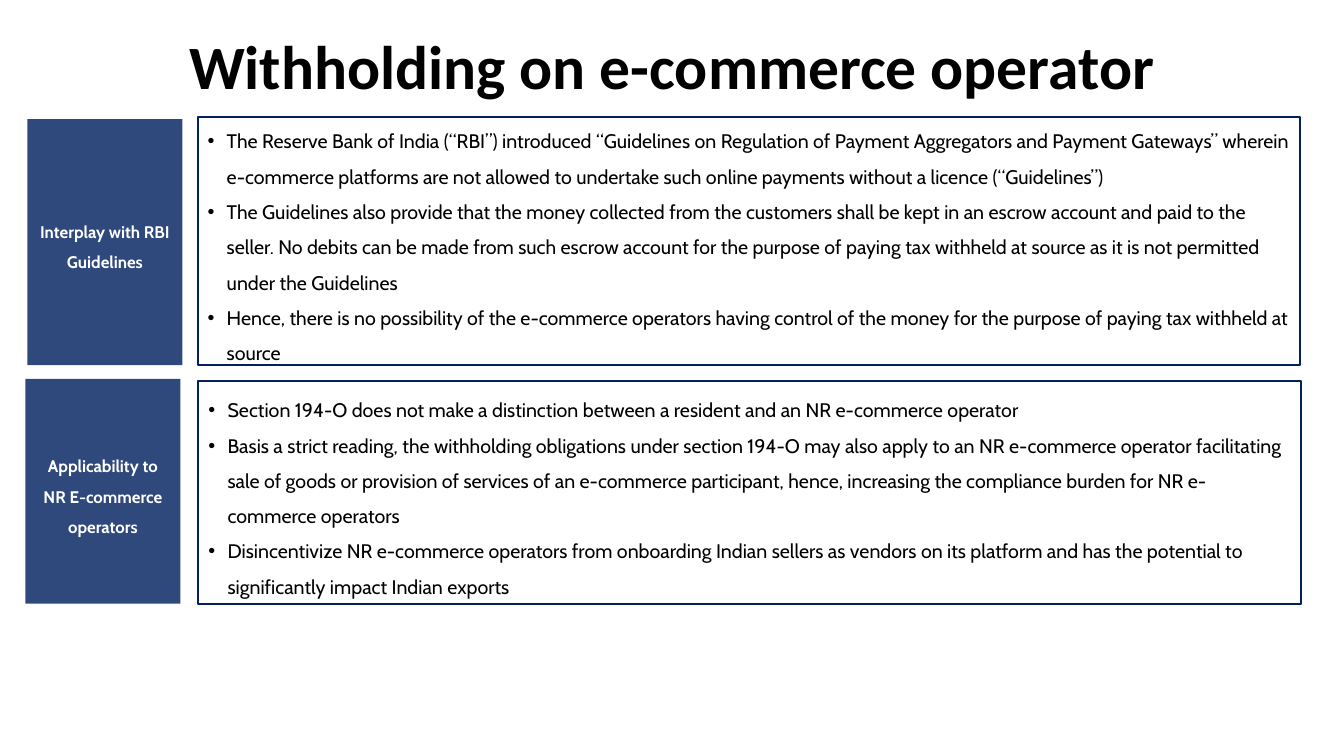
from lxml import etree
from pptx import Presentation
from pptx import util as u
from pptx.dml.color import RGBColor
from pptx.enum import shapes, text
from pptx.oxml.ns import qn

NAVY, BLACK, WHITE = "002060", "000000", "FFFFFF"
INDENT = u.Cm(0.48)

SECTIONS = [
    {
        "label": "Interplay with RBI Guidelines",
        "label_box": (0.69, 3.0, 3.91, 6.2),
        "list_box": (4.98, 2.95, 27.79, 6.25),
        "points": [
            "The Reserve Bank of India (“RBI”) introduced “Guidelines on Regulation of Payment "
            "Aggregators and Payment Gateways” wherein e-commerce platforms are not allowed to "
            "undertake such online payments without a licence (“Guidelines”)",
            "The Guidelines also provide that the money collected from the customers shall be kept "
            "in an escrow account and paid to the seller. No debits can be made from such escrow "
            "account for the purpose of paying tax withheld at source as it is not permitted under "
            "the Guidelines",
            "Hence, there is no possibility of the e-commerce operators having control of the money "
            "for the purpose of paying tax withheld at source",
        ],
    },
    {
        "label": "Applicability to NR E-commerce operators",
        "label_box": (0.64, 9.55, 3.91, 5.66),
        "list_box": (5.0, 9.6, 27.79, 5.61),
        "points": [
            "Section 194-O does not make a distinction between a resident and an NR e-commerce operator",
            "Basis a strict reading, the withholding obligations under section 194-O may also apply "
            "to an NR e-commerce operator facilitating sale of goods or provision of services of an "
            "e-commerce participant, hence, increasing the compliance burden for NR e-commerce operators",
            "Disincentivize NR e-commerce operators from onboarding Indian sellers as vendors on its "
            "platform and has the potential to significantly impact Indian exports",
        ],
    },
]


def color(value):
    """Return the colour for a hex string."""
    return RGBColor.from_string(value)


def place(shape, box):
    """Move a shape to a box of left, top, width and height in centimetres."""
    shape.left, shape.top, shape.width, shape.height = (u.Cm(length) for length in box)


def add_bullet(paragraph):
    """Give a paragraph a hanging round bullet."""
    properties = paragraph._p.get_or_add_pPr()
    properties.set("marL", str(INDENT))
    properties.set("indent", str(-INDENT))
    etree.SubElement(properties, qn("a:buFont"), typeface="Arial")
    etree.SubElement(properties, qn("a:buChar"), char="•")


def write(shape, paragraphs, *, size, font="Cabin", fill=BLACK, bold=False,
          align=text.PP_ALIGN.LEFT, spacing=1.5, bullets=False):
    """Fill a shape with formatted, vertically centred paragraphs."""
    frame = shape.text_frame
    frame.word_wrap = True
    frame.auto_size = text.MSO_AUTO_SIZE.NONE
    frame.vertical_anchor = text.MSO_ANCHOR.MIDDLE
    frame.text = "\n".join(paragraphs)
    for paragraph in frame.paragraphs:
        if bullets:
            add_bullet(paragraph)
        paragraph.alignment = align
        paragraph.line_spacing = spacing
        paragraph.space_before = paragraph.space_after = u.Pt(0)
        paragraph.font.size = u.Pt(size)
        for run in paragraph.runs:
            run.font.name = font
            run.font.size = u.Pt(size)
            run.font.bold = bold
            run.font.color.rgb = color(fill)


def add_title(slide, box):
    """Place the slide title in its box."""
    title = slide.shapes.title
    place(title, box)
    write(title, ["Withholding on e-commerce operator"], size=44, font="Calibri",
          bold=True, align=text.PP_ALIGN.CENTER, spacing=0.9)


def add_label(slide, box, label):
    """Add a translucent navy panel with a section label."""
    panel = slide.shapes.add_shape(shapes.MSO_SHAPE.RECTANGLE, *(u.Cm(length) for length in box))
    panel.shadow.inherit = False
    panel.fill.solid()
    panel.fill.fore_color.rgb = color(NAVY)
    rgb = panel.fill._xPr.find(qn("a:solidFill")).find(qn("a:srgbClr"))
    etree.SubElement(rgb, qn("a:alpha"), val="81000")
    panel.line.fill.background()
    write(panel, [label], size=12, fill=WHITE, bold=True, align=text.PP_ALIGN.CENTER)


def add_points(placeholder, box, points):
    """Place a framed bullet list in its box."""
    place(placeholder, box)
    placeholder.line.color.rgb = color(NAVY)
    placeholder.line.width = u.Pt(1.5)
    write(placeholder, points, size=14, bullets=True)


def main():
    """Build and save the presentation."""
    presentation = Presentation()
    presentation.slide_width, presentation.slide_height = u.Cm(33.87), u.Cm(19.05)
    slide = presentation.slides.add_slide(presentation.slide_layouts.get_by_name("Two Content"))
    add_title(slide, (2.34, 0.2, 29.21, 3.1))
    for index, section in enumerate(SECTIONS, start=1):
        add_points(slide.placeholders[index], section["list_box"], section["points"])
        add_label(slide, section["label_box"], section["label"])
    presentation.save("out.pptx")


if __name__ == "__main__":
    main()
